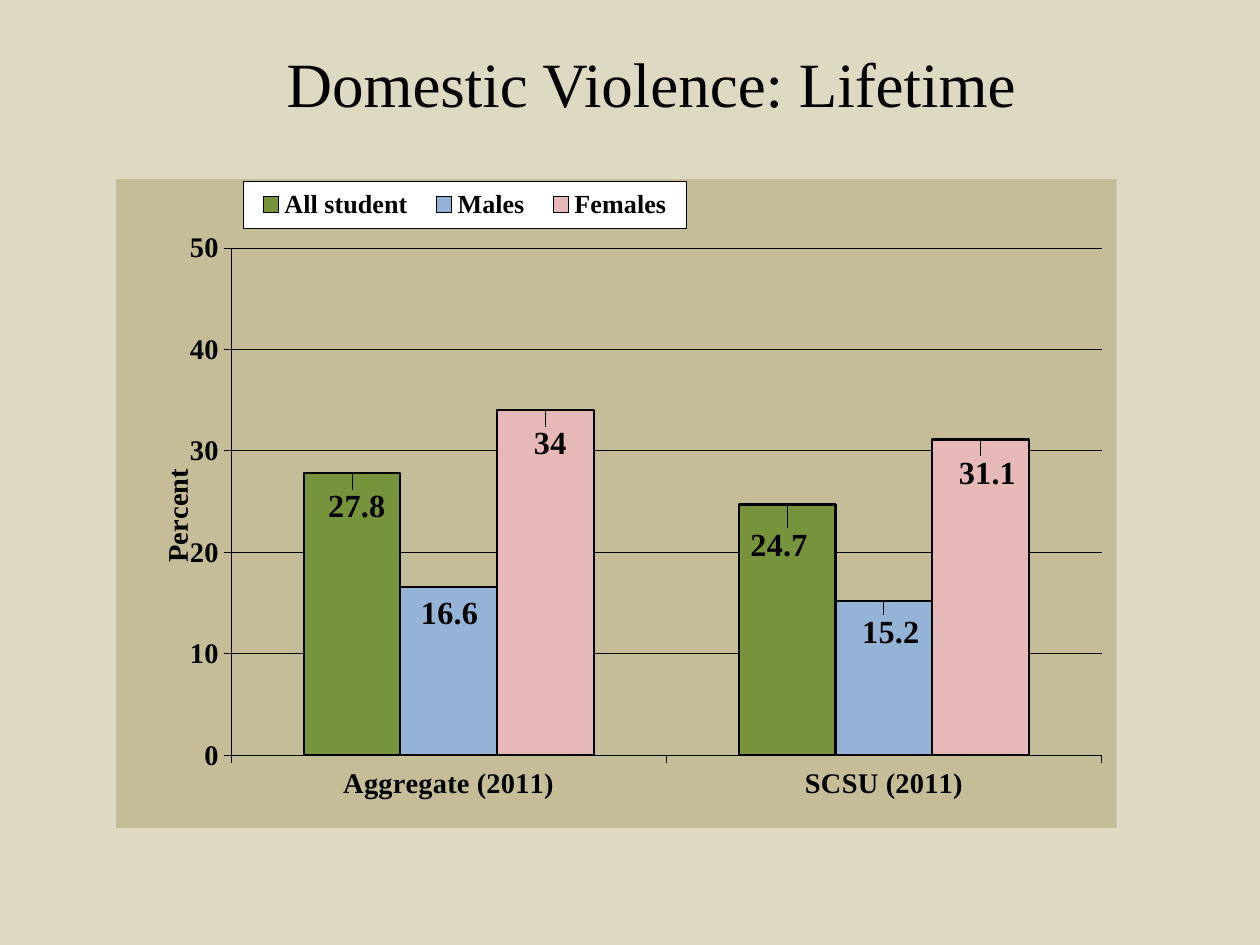
import pptx
import pptx.chart.data
import pptx.dml.color
import pptx.enum.chart
import pptx.enum.text
import pptx.oxml
import pptx.oxml.ns
import pptx.util
from dataclasses import dataclass

Cm, Pt = pptx.util.Cm, pptx.util.Pt
qn = pptx.oxml.ns.qn
enum = pptx.enum.chart


@dataclass
class Theme:
    face: str = "Times New Roman"
    ink: str = "000000"
    page: str = "DDD9C3"
    panel: str = "C4BD97"
    box: str = "FFFFFF"
    bars: tuple = ("77933C", "95B3D7", "E6B9B8")
    title: float = 36
    axis: float = 16.2
    legend: float = 14.9
    label: float = 18.4
    thin: float = 0.31
    edge: float = 1.25


def put(item, values):
    for name, value in values.items():
        setattr(item, name, value)


def place(parent, after, **parts):
    """Set a manual chart layout, given in percent of the chart."""
    old = parent.find(qn("c:layout"))
    if old is not None:
        parent.remove(old)
    node = pptx.oxml.parse_xml(
        f'<c:layout {pptx.oxml.ns.nsdecls("c")}><c:manualLayout/></c:layout>')
    for name, value in parts.items():
        text = value if isinstance(value, str) else f"{value / 100:.3f}"
        node[0].append(node.makeelement(qn(f"c:{name}"), {"val": text}))
    if after:
        parent.find(qn(after)).addnext(node)
    else:
        parent.insert(0, node)


class Deck:
    def __init__(self, theme):
        self.theme = theme
        self.file = pptx.Presentation()
        put(self.file, {"slide_width": Cm(25.4), "slide_height": Cm(19.05)})

    def tint(self, code):
        return pptx.dml.color.RGBColor.from_string(code)

    def fill(self, item, code):
        item.fill.solid()
        item.fill.fore_color.rgb = self.tint(code)

    def line(self, item, width):
        item.line.width = Pt(width)
        item.line.color.rgb = self.tint(self.theme.ink)

    def font(self, font, size, bold=True):
        put(font, {"name": self.theme.face, "size": Pt(size), "bold": bold})
        font.color.rgb = self.tint(self.theme.ink)

    def page(self):
        self.slide = self.file.slides.add_slide(self.file.slide_layouts[6])
        self.fill(self.slide.background, self.theme.page)

    def title(self, text, *spot):
        frame = self.slide.shapes.add_textbox(*map(Cm, spot)).text_frame
        put(frame, {"word_wrap": True, "margin_bottom": Cm(0.86),
                    "vertical_anchor": pptx.enum.text.MSO_ANCHOR.MIDDLE})
        para = frame.paragraphs[0]
        para.alignment = pptx.enum.text.PP_ALIGN.CENTER
        run = para.add_run()
        run.text = text
        self.font(run.font, self.theme.title, False)

    def chart(self, groups, rows, shifts, *spot):
        data = pptx.chart.data.CategoryChartData()
        data.categories = groups
        for name, values in rows.items():
            data.add_series(name, values)
        chart = self.slide.shapes.add_chart(
            enum.XL_CHART_TYPE.COLUMN_CLUSTERED, *map(Cm, spot), data).chart
        put(chart, {"has_title": False, "has_legend": True})
        self.font(chart.font, self.theme.axis)

        # Chart area and plot area
        root = chart._chartSpace
        root.find(qn("c:chart")).addnext(pptx.oxml.parse_xml(
            f'<c:spPr {pptx.oxml.ns.nsdecls("c", "a")}><a:solidFill>'
            f'<a:srgbClr val="{self.theme.panel}"/></a:solidFill>'
            '<a:ln><a:noFill/></a:ln></c:spPr>'))
        place(root.chart.plotArea, None, layoutTarget="inner", xMode="edge",
              yMode="edge", x=11.5, y=10.6, w=87, h=78.2)
        put(chart.plots[0], {"gap_width": 150, "overlap": 0,
                             "vary_by_categories": False})
        for row, code, moves in zip(chart.plots[0].series,
                                    self.theme.bars, shifts):
            self.bars(row, code, moves)
        self.axes(chart)
        self.legend(chart.legend)

    def bars(self, row, code, moves):
        row.invert_if_negative = False
        self.fill(row.format, code)
        self.line(row.format, self.theme.edge)
        inside = enum.XL_LABEL_POSITION.INSIDE_END
        put(row.data_labels, {"show_value": True, "position": inside})
        self.font(row.data_labels.font, self.theme.label)
        for spot in range(len(moves)):
            label = row.points[spot].data_label
            self.font(label.font, self.theme.label)
            label.position = inside
        for node, (x, y) in zip(row._element.iter(qn("c:dLbl")), moves):
            place(node, "c:idx", x=x, y=y)

    def axes(self, chart):
        scale = chart.value_axis
        for axis in (chart.category_axis, scale):
            put(axis, {"major_tick_mark": enum.XL_TICK_MARK.OUTSIDE,
                       "minor_tick_mark": enum.XL_TICK_MARK.NONE})
            self.font(axis.tick_labels.font, self.theme.axis)
            self.line(axis.format, self.theme.thin)
        chart.category_axis.tick_label_position = enum.XL_TICK_LABEL_POSITION.LOW
        put(scale, {"minimum_scale": 0, "maximum_scale": 50, "major_unit": 10,
                    "has_major_gridlines": True})
        self.line(scale.major_gridlines.format, self.theme.thin)

        # Value axis title
        name = scale.axis_title
        name.text_frame.text = "Percent"
        self.font(name.text_frame.paragraphs[0].runs[0].font, self.theme.axis)
        turn = next(name._element.iter(qn("a:bodyPr")))
        put_all = {"rot": "-5400000", "vert": "horz"}
        for key, value in put_all.items():
            turn.set(key, value)
        place(name._element, "c:tx", xMode="edge", yMode="edge", x=3.7, y=43.8)

    def legend(self, legend):
        put(legend, {"position": enum.XL_LEGEND_POSITION.RIGHT,
                     "include_in_layout": False})
        self.font(legend.font, self.theme.legend)
        place(legend._element, "c:legendPos", xMode="edge", yMode="edge",
              x=12.7, y=0.3, w=44.3, h=7.3)
        legend._element.find(qn("c:txPr")).addprevious(pptx.oxml.parse_xml(
            f'<c:spPr {pptx.oxml.ns.nsdecls("c", "a")}><a:solidFill>'
            f'<a:srgbClr val="{self.theme.box}"/></a:solidFill>'
            f'<a:ln w="{Pt(self.theme.thin)}"><a:solidFill>'
            f'<a:srgbClr val="{self.theme.ink}"/></a:solidFill></a:ln></c:spPr>'))


def main():
    deck = Deck(Theme())
    deck.page()
    deck.title("Domestic Violence: Lifetime", 2.34, 0.43, 21.59, 3.18)
    rows = {"All student": (27.8, 24.7),
            "Males": (16.6, 15.2),
            "Females": (34, 31.1)}
    # Label shifts from the inside end of each bar, in percent
    shifts = (((0.5, 1.7), (-0.8, 2.8)),
              ((0.1, 0.6), (0.7, 1.4)),
              ((0.5, 1.7), (0.7, 1.7)))
    deck.chart(("Aggregate (2011)", "SCSU (2011)"), rows, shifts,
               2.34, 3.61, 20.17, 13.08)
    deck.file.save("out.pptx")


if __name__ == "__main__":
    main()
